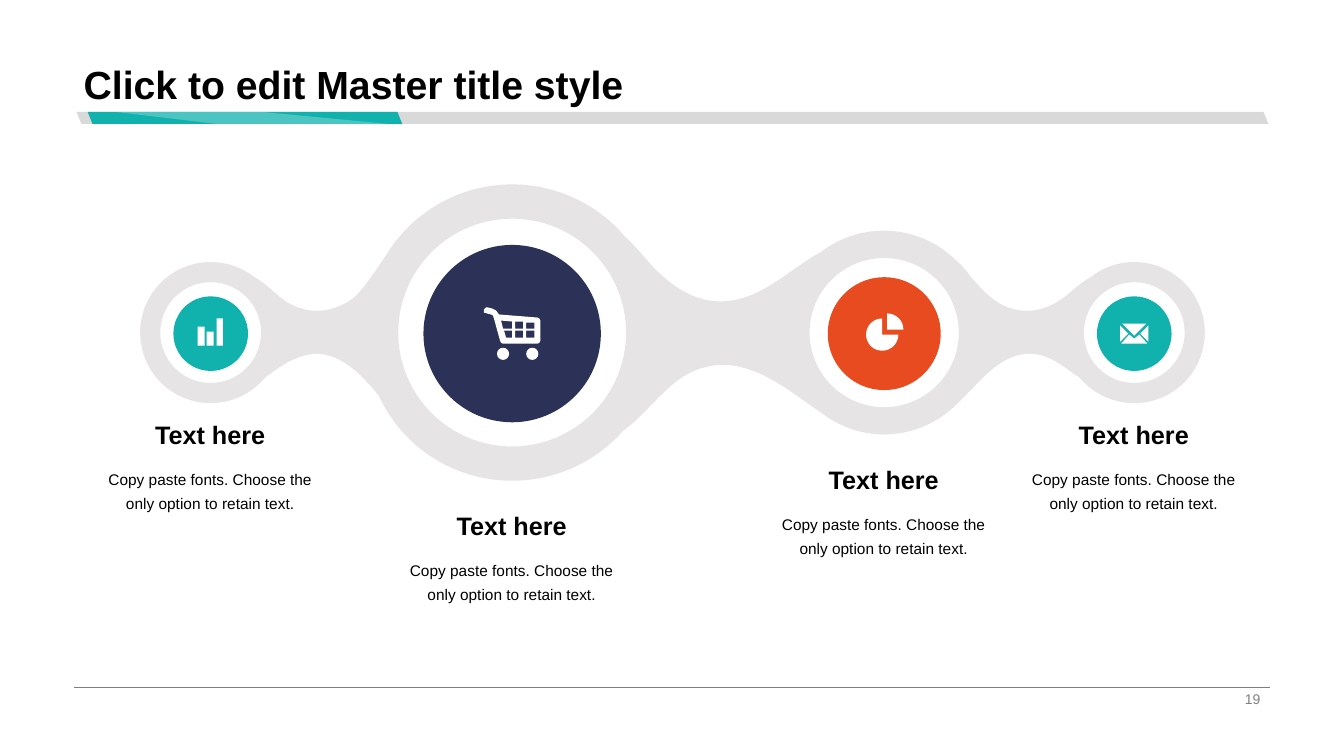
from math import atan2, ceil, cos, pi, sin, tan

from lxml.etree import SubElement
from pptx import Presentation
from pptx.dml.color import RGBColor
from pptx.enum.shapes import MSO_CONNECTOR as CONN, MSO_SHAPE as SHAPE
from pptx.enum.text import MSO_ANCHOR as ANCHOR, PP_ALIGN as ALIGN
from pptx.oxml.ns import qn
from pptx.util import Inches, Pt

COLORS = {"teal": "11B2AE", "navy": "2C3257", "orange": "E84B1F", "white": "FFFFFF",
          "black": "000000", "gray": "808080", "bar": "D9D9D9", "band": "D7D5D6"}

# Centre x from the left end of the chain; radii of band, hole and disc; top of the label
HUBS = [
    dict(x=0.70, band=0.70, hole=0.50, disc=0.37, color="teal", icon="bars", label=4.11),
    dict(x=3.69, band=1.47, hole=1.13, disc=0.88, color="navy", icon="cart", label=5.01),
    dict(x=7.38, band=1.01, hole=0.74, disc=0.56, color="orange", icon="pie", label=4.56),
    dict(x=9.86, band=0.70, hole=0.50, disc=0.37, color="teal", icon="mail", label=4.11),
]
# Bezier points of the necks between hubs, from the left end and the axis of the chain
UPPER_NECKS = [
    [(1.13, -.55), (1.25, -.49), (1.35, -.37), (1.46, -.3), (1.6, -.22), (1.75, -.19),
     (1.91, -.24), (2.02, -.27), (2.12, -.33), (2.19, -.42), (2.29, -.54), (2.38, -.68),
     (2.46, -.8)],
    [(4.81, -.95), (4.91, -.86), (4.99, -.76), (5.08, -.66), (5.27, -.46), (5.5, -.3),
     (5.78, -.31), (6.11, -.32), (6.36, -.55), (6.62, -.72), (6.66, -.75), (6.7, -.77),
     (6.74, -.79)],
    [(8.1, -.72), (8.15, -.67), (8.2, -.61), (8.24, -.55), (8.28, -.51), (8.32, -.46),
     (8.36, -.42), (8.44, -.34), (8.53, -.27), (8.64, -.24), (8.8, -.19), (8.95, -.22),
     (9.09, -.3), (9.21, -.37), (9.31, -.49), (9.43, -.55)],
]
LOWER_NECKS = [
    [(1.22, .45), (1.24, .44), (1.27, .42), (1.29, .41), (1.42, .31), (1.57, .22),
     (1.74, .21), (2, .21), (2.2, .42), (2.37, .63)],
    [(4.79, .97), (5.06, .78), (5.25, .44), (5.58, .35), (5.91, .25), (6.22, .42),
     (6.49, .61), (6.59, .68), (6.69, .75), (6.79, .82)],
    [(8.1, .71), (8.13, .68), (8.16, .65), (8.19, .62), (8.2, .6), (8.22, .59),
     (8.24, .57), (8.4, .4), (8.58, .21), (8.82, .21), (8.99, .21), (9.13, .31),
     (9.26, .41), (9.29, .42), (9.31, .44), (9.33, .46)],
]


class Curve(list):
    """Contour whose points are a chain of cubic Bezier segments."""


def arc(cx, cy, r, start, end):
    """Bezier points of a circular arc, in segments of a quarter turn at most."""
    count = ceil(abs(end - start) / (pi / 2) - 0.01)
    step = (end - start) / count
    k = 4 / 3 * tan(step / 4)
    pts = [(cx + r * cos(start), cy + r * sin(start))]
    for i in range(count):
        a, b = start + i * step, start + (i + 1) * step
        pts += [(cx + r * (cos(a) - k * sin(a)), cy + r * (sin(a) + k * cos(a))),
                (cx + r * (cos(b) + k * sin(b)), cy + r * (sin(b) - k * cos(b))),
                (cx + r * cos(b), cy + r * sin(b))]
    return pts


def circle(cx, cy, r):
    return Curve(arc(cx, cy, r, 0, 2 * pi))


def wedge(cx, cy, r, start, end):
    return Curve(arc(cx, cy, r, start, end) + [(cx, cy)] * 3)


def rect(x1, y1, x2, y2):
    return [(x1, y1), (x2, y1), (x2, y2), (x1, y2)]


def band_edge(necks, side):
    """Left-to-right edge of the band; side is -1 for the upper edge, 1 for the lower."""
    edge = [(0, 0)]
    for i, hub in enumerate(HUBS):
        start, end = side * pi, 0
        if i > 0:
            x, y = necks[i - 1][-1]
            start = atan2(y, x - hub["x"])
        if i < len(necks):
            x, y = necks[i][0]
            end = atan2(y, x - hub["x"])
        edge += arc(hub["x"], 0, hub["band"], start, end)[1:]
        if i < len(necks):
            edge += necks[i][1:]
    return edge


# Outlines of the icons, from the centre of their disc
ICONS = {
    "bars": [rect(-.13, -.07, -.06, .12), rect(-.04, -.02, .03, .12),
             rect(.06, -.15, .12, .12)],
    "cart": [
        [(.28, -.13), (.28, .07), (.27, .09), (.25, .1), (-.09, .1), (-.11, .09),
         (-.12, .07), (-.18, -.15), (-.19, -.18), (-.21, -.19), (-.25, -.2), (-.28, -.21),
         (-.28, -.24), (-.26, -.26), (-.24, -.26), (-.2, -.25), (-.16, -.23),
         (-.13, -.19), (.25, -.16), (.27, -.15)],
        [(-.11, -.13), (0, -.12), (0, -.05), (-.09, -.05)],
        [(-.08, -.03), (0, -.03), (0, .04), (-.06, .04)],
        rect(.03, -.12, .11, -.05), rect(.03, -.03, .11, .04),
        rect(.14, -.11, .22, -.05), rect(.14, -.03, .22, .04),
        circle(-.09, .2, .06), circle(.2, .2, .06)],
    "pie": [wedge(.03, -.04, .16, -pi / 2, 0), wedge(-.02, .01, .16, 0, 1.5 * pi)],
    "mail": [[(-.14, -.08), (-.06, 0), (-.14, .08)], [(.14, -.08), (.06, 0), (.14, .08)],
             [(-.12, -.1), (.12, -.1), (0, .02)],
             [(-.13, .1), (-.05, .01), (0, .05), (.05, .01), (.13, .1)]],
}


def paint(sp, color, alpha=None):
    sp.shadow.inherit = False
    sp.fill.solid()
    sp.fill.fore_color.rgb = RGBColor.from_string(COLORS[color])
    sp.line.fill.background()
    if alpha is not None:
        clr = sp._element.spPr.find(qn("a:solidFill"))[0]
        SubElement(clr, qn("a:alpha")).set("val", str(alpha * 1000))


def add_outline(slide, contours, x, y, color, alpha=None):
    """Draw closed contours, given in inches from (x, y), as one freeform."""
    paths = [[(Inches(x + px), Inches(y + py)) for px, py in c] for c in contours]
    builder = slide.shapes.build_freeform(*paths[0][0])
    for i, points in enumerate(paths):
        if i:
            builder.move_to(*points[0])
        builder.add_line_segments(points[1:], close=True)
    sp = builder.convert_to_shape()
    outline = next(sp._element.iter(qn("a:path")))
    segments = iter(list(outline.iter(qn("a:lnTo"))))
    for contour in contours:
        lines = [next(segments) for _ in contour[1:]]
        if isinstance(contour, Curve):
            for first, *others in zip(lines[::3], lines[1::3], lines[2::3]):
                first.tag = qn("a:cubicBezTo")
                for line in others:
                    first.append(line[0])
                    outline.remove(line)
    paint(sp, color, alpha)


def set_text(sp, text, size, color="black", bold=False, align=ALIGN.LEFT,
             anchor=ANCHOR.TOP, spacing=1.0, wrap=True):
    tf = sp.text_frame
    tf.word_wrap = wrap
    tf.vertical_anchor = anchor
    p = tf.paragraphs[0]
    p.alignment = align
    p.line_spacing = spacing
    r = p.add_run()
    r.text = text
    r.font.name, r.font.size, r.font.bold = "Arial", Pt(size), bold
    r.font.color.rgb = RGBColor.from_string(COLORS[color])


def add_text(slide, x, y, w, h, text, size, **fmt):
    box = slide.shapes.add_textbox(Inches(x), Inches(y), Inches(w), Inches(h))
    set_text(box, text, size, **fmt)


def add_header(slide, x, y, w, h):
    title = slide.shapes.title
    title.left, title.top, title.width, title.height = map(Inches, (x, y, w, h))
    set_text(title, "Click to edit Master title style", 28, bold=True,
             anchor=ANCHOR.BOTTOM, spacing=0.9)
    bar_y = y + h - 0.01
    for dx, bar_w, color in ((0.03, 11.82, "bar"), (0.14, 3.12, "teal")):
        sp = slide.shapes.add_shape(SHAPE.PARALLELOGRAM, Inches(x + dx), Inches(bar_y),
                                    Inches(bar_w), Inches(0.12))
        sp.adjustments[0] = 0.4
        sp._element.spPr.xfrm.set("flipH", "1")
        paint(sp, color)
    glint = [(0, 0), (1.46, 0), (2.71, 0.12), (1.02, 0.12)]
    add_outline(slide, [glint], x + 0.41, bar_y, "white", alpha=25)


def add_footer(slide, x, y, w, h):
    rule = slide.shapes.add_connector(CONN.STRAIGHT, Inches(x), Inches(y),
                                      Inches(x + w), Inches(y))
    rule.line.color.rgb = RGBColor.from_string(COLORS["gray"])
    rule.line.width = Pt(0.5)
    SubElement(rule._element.spPr, qn("a:effectLst"))
    add_text(slide, x + w - 3.18, y, 3.18, h, "19", 10, color="gray",
             align=ALIGN.RIGHT, anchor=ANCHOR.MIDDLE)


def add_hub_chain(slide, x, axis):
    outline = Curve(band_edge(UPPER_NECKS, -1) + band_edge(LOWER_NECKS, 1)[-2::-1])
    holes = [circle(hub["x"], 0, hub["hole"]) for hub in HUBS]
    add_outline(slide, [outline] + holes, x, axis, "band", alpha=62)
    for hub in HUBS:
        cx, cy, r = x + hub["x"], axis + 0.01, hub["disc"]
        disc = slide.shapes.add_shape(SHAPE.OVAL, Inches(cx - r), Inches(cy - r),
                                      Inches(2 * r), Inches(2 * r))
        paint(disc, hub["color"])
        add_outline(slide, ICONS[hub["icon"]], cx, cy, "white")
        add_label(slide, cx - 1.16, hub["label"], 2.31)


def add_label(slide, x, y, w):
    add_text(slide, x, y, w, 0.45, "Text here", 18, bold=True, align=ALIGN.CENTER,
             wrap=False)
    add_text(slide, x, y + 0.45, w, 0.61,
             "Copy paste fonts. Choose the only option to retain text.", 11,
             align=ALIGN.CENTER, spacing=1.3)


prs = Presentation()
prs.slide_width, prs.slide_height = Inches(13.33), Inches(7.5)
slide = prs.slides.add_slide(prs.slide_layouts[5])
add_header(slide, 0.73, 0, 11.87, 1.12)
add_footer(slide, 0.73, 6.82, 11.87, 0.23)
add_hub_chain(slide, 1.39, 3.3)
prs.save("out.pptx")
